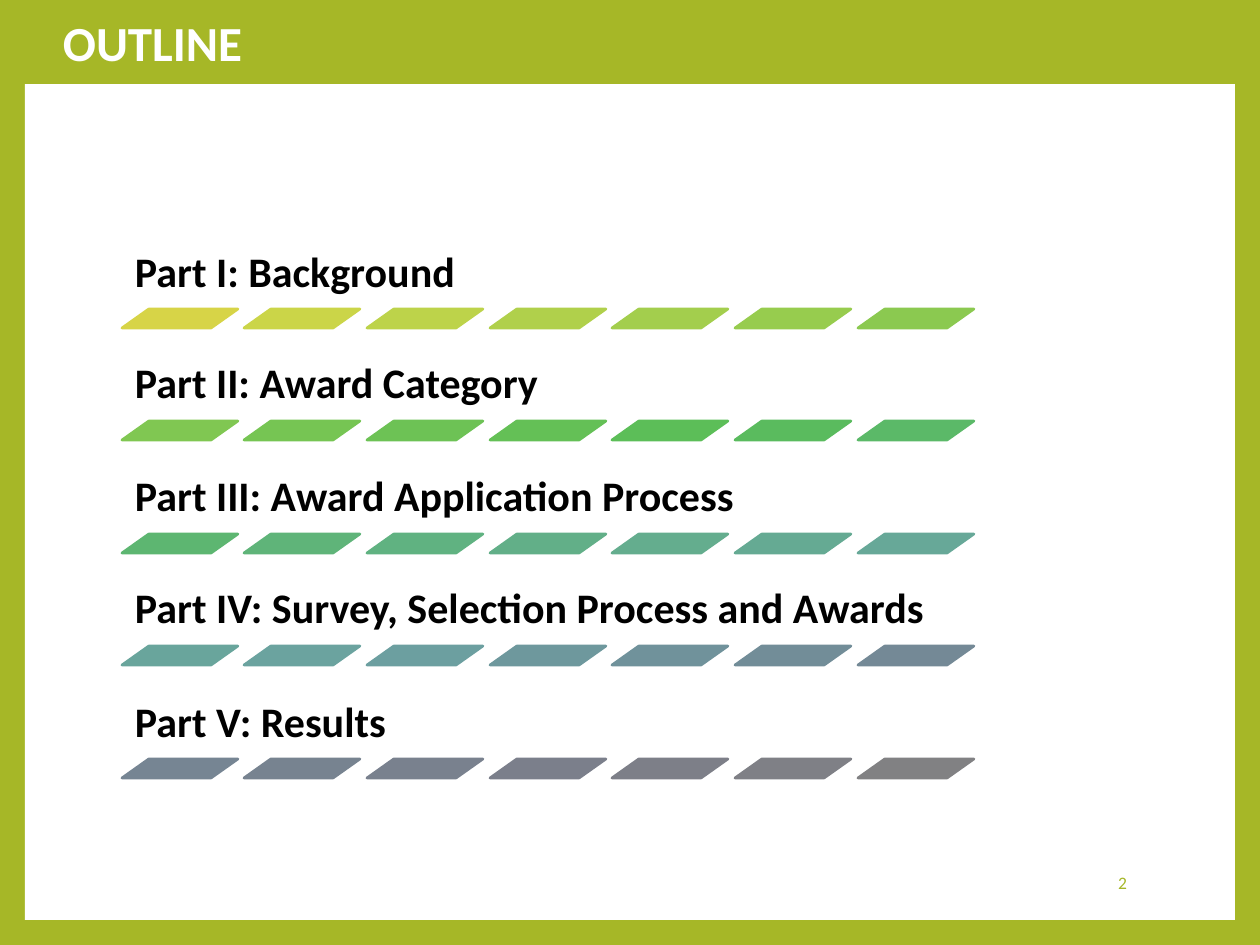
import colorsys

from pptx import Presentation, util as u
from pptx.dml.color import RGBColor
from pptx.enum import shapes, text

PX = 914400 / 126
FONT = "Calibri"
COLORS = {
    "green": "A6B727",
    "white": "FFFFFF",
    "black": "000000",
    "first_bar": "D7D447",
    "last_bar": "818183",
}
PARTS = [
    "Part I: Background",
    "Part II: Award Category",
    "Part III: Award Application Process",
    "Part IV: Survey, Selection Process and Awards",
    "Part V: Results",
]
BARS_PER_PART = 7
LEFT, TOP = 122, 230
COLUMN_SPAN, ROW_SPAN = 736, 450  # from first to last bar, first to last part
HEADING_HEIGHT = 79


def px(*lengths):
    return [u.Emu(round(length * PX)) for length in lengths]


def to_hls(color):
    red, green, blue = RGBColor.from_string(color)
    return colorsys.rgb_to_hls(red / 255, green / 255, blue / 255)


def blend(share):
    """Colour between the first and last bar, mixed by hue, lightness and saturation."""
    ends = zip(to_hls(COLORS["first_bar"]), to_hls(COLORS["last_bar"]))
    mixed = colorsys.hls_to_rgb(*(a + (b - a) * share for a, b in ends))
    return RGBColor(*(round(channel * 255) for channel in mixed))


def add_block(parent, kind, place, color):
    block = parent.add_shape(kind, *px(*place))
    block.shadow.inherit = False
    block.fill.solid()
    block.fill.fore_color.rgb = color
    block.line.fill.background()
    return block


def add_bar(parent, place, color):
    bar = add_block(parent, shapes.MSO_SHAPE.PARALLELOGRAM, place, color)
    bar.adjustments[0] = 1.41
    bar.line.color.rgb = color
    bar.line.width = u.Pt(1.5)


def write(box, words, size, color, bold=False, align=text.PP_ALIGN.LEFT,
          anchor=text.MSO_ANCHOR.MIDDLE, insets=(13, 6, 13, 6)):
    """Set one paragraph; insets run left, top, right, bottom."""
    frame = box.text_frame
    frame.word_wrap = True
    frame.vertical_anchor = anchor
    (frame.margin_left, frame.margin_top,
     frame.margin_right, frame.margin_bottom) = px(*insets)
    para = frame.paragraphs[0]
    para.text = words
    para.alignment = align
    para.font.name = FONT
    para.font.size = u.Pt(size)
    para.font.bold = bold
    para.font.color.rgb = RGBColor.from_string(COLORS[color])
    return para


def add_part(parent, row, heading):
    top = TOP + row * ROW_SPAN // (len(PARTS) - 1)
    box = parent.add_textbox(*px(LEFT, top, 869, HEADING_HEIGHT))
    para = write(box, heading, 24, "black", bold=True,
                 anchor=text.MSO_ANCHOR.BOTTOM, insets=(13, 13, 13, 13))
    para.line_spacing = 0.9
    last = len(PARTS) * BARS_PER_PART - 1
    for column in range(BARS_PER_PART):
        left = LEFT + column * COLUMN_SPAN // (BARS_PER_PART - 1)
        share = (row * BARS_PER_PART + column) / last
        add_bar(parent, (left, top + HEADING_HEIGHT, 116, 19), blend(share))


def main():
    deck = Presentation()
    deck.slide_width, deck.slide_height = px(1260, 945)
    page = deck.slides.add_slide(deck.slide_layouts[6])
    green = RGBColor.from_string(COLORS["green"])
    white = RGBColor.from_string(COLORS["white"])
    page.background.fill.solid()
    page.background.fill.fore_color.rgb = green

    add_block(page.shapes, shapes.MSO_SHAPE.RECTANGLE, (25, 25, 1210, 895), white)
    number = page.shapes.add_textbox(*px(964, 858, 176, 50))
    write(number, "2", 10, "green", align=text.PP_ALIGN.RIGHT)

    outline = page.shapes.add_group_shape()
    for row, heading in enumerate(PARTS):
        add_part(outline.shapes, row, heading)

    header = add_block(page.shapes, shapes.MSO_SHAPE.RECTANGLE, (0, 0, 1260, 84), green)
    write(header, "OUTLINE", 28, "white", bold=True, insets=(63, 6, 13, 6))

    deck.save("out.pptx")


if __name__ == "__main__":
    main()
